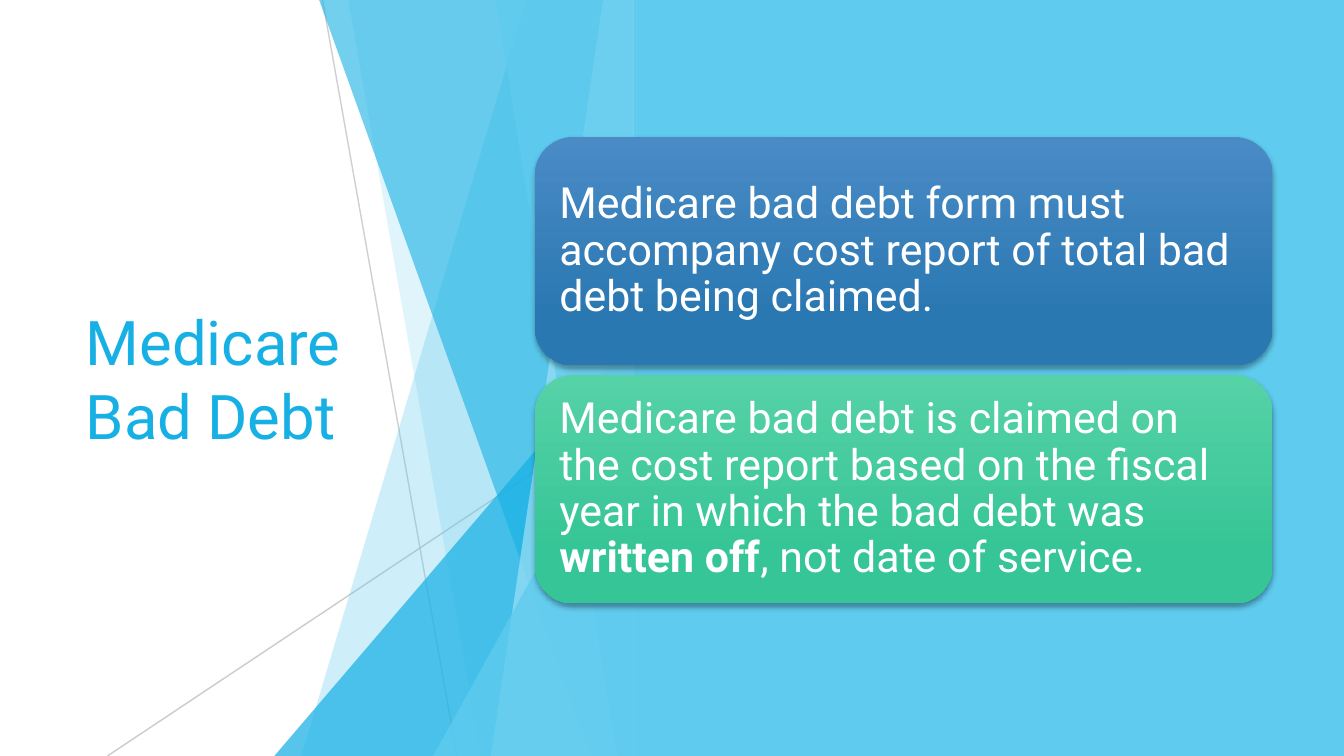
from pptx import Presentation
from pptx.dml.color import RGBColor
from pptx.enum.shapes import MSO_CONNECTOR, MSO_SHAPE
from pptx.enum.text import MSO_ANCHOR
from pptx.oxml import parse_xml
from pptx.oxml.ns import nsdecls, qn
from pptx.util import Pt

WHITE = RGBColor(0xFF, 0xFF, 0xFF)
SKY = RGBColor(0x5F, 0xCB, 0xEF)
AZURE = RGBColor(0x17, 0xB0, 0xE4)
PALE = RGBColor(0x9F, 0xE0, 0xF5)
GREY = RGBColor(0xBF, 0xBF, 0xBF)
BLUES = RGBColor(0x4A, 0x8B, 0xC6), RGBColor(0x2A, 0x78, 0xB2)
GREENS = RGBColor(0x56, 0xD2, 0xA7), RGBColor(0x36, 0xC5, 0x96)

WIDTH, HEIGHT = 720, 405
PANEL_LEFT = 339.3
FACET_TOP = -0.6


def set_opacity(shape, percent):
    for color in shape.element.spPr.iter(qn("a:srgbClr")):
        color.append(parse_xml(f'<a:alpha {nsdecls("a")} val="{percent * 1000}"/>'))


def add_text(left, top, width, height, runs, size, color, **spacing):
    """Add a vertically centred text box; runs are (text, bold) pairs."""
    box = slide.shapes.add_textbox(Pt(left), Pt(top), Pt(width), Pt(height))
    frame = box.text_frame
    frame.word_wrap = True
    frame.vertical_anchor = MSO_ANCHOR.MIDDLE
    for side in ("left", "right", "top", "bottom"):
        setattr(frame, f"margin_{side}", Pt(7.2))
    paragraph = frame.paragraphs[0]
    for name, value in spacing.items():
        setattr(paragraph, name, value)
    for text, bold in runs:
        run = paragraph.add_run()
        run.text = text
        run.font.color.rgb = color
        for name, value in {"name": "Roboto", "size": Pt(size), "bold": bold}.items():
            setattr(run.font, name, value)


presentation = Presentation()
presentation.slide_width, presentation.slide_height = Pt(WIDTH), Pt(HEIGHT)
slide = presentation.slides.add_slide(presentation.slide_layouts[6])
slide.background.fill.solid()
slide.background.fill.fore_color.rgb = WHITE

# Thin crossing lines
for start_x, start_y, end_x, end_y, opacity in (
    (172.8, 0, 244.8, HEIGHT, 75),
    (PANEL_LEFT, 217.5, 57.6, HEIGHT, 80),
):
    line = slide.shapes.add_connector(
        MSO_CONNECTOR.STRAIGHT, Pt(start_x), Pt(start_y), Pt(end_x), Pt(end_y))
    line.line.color.rgb = GREY
    line.line.width = Pt(0.75)
    set_opacity(line, opacity)
    line.element.spPr.append(parse_xml(f'<a:effectLst {nsdecls("a")}/>'))

# Translucent facets: top-left x, bottom-left x, colour, opacity;
# a triangle gives its top y in place of the top-left x
for kind, top_value, bottom_x, color, opacity in (
    ("band", 282.2, 161.5, SKY, 30),
    ("band", 186.5, 257.8, SKY, 20),
    ("triangle", 180, 147, AZURE, 72),
    ("band", 170.8, 316.6, AZURE, 60),
    ("band", 323.2, 263, PALE, 70),
    ("band", 265.5, 330.6, SKY, 65),
    ("triangle", 211.5, 232, SKY, 80),
):
    if kind == "triangle":
        facet = slide.shapes.add_shape(
            MSO_SHAPE.ISOSCELES_TRIANGLE, Pt(bottom_x), Pt(top_value),
            Pt(PANEL_LEFT - bottom_x), Pt(HEIGHT - top_value))
        facet.adjustments[0] = 1
    else:
        builder = slide.shapes.build_freeform(Pt(top_value), Pt(FACET_TOP))
        corners = (PANEL_LEFT, FACET_TOP), (PANEL_LEFT, HEIGHT), (bottom_x, HEIGHT)
        builder.add_line_segments([(Pt(x), Pt(y)) for x, y in corners])
        facet = builder.convert_to_shape()
    facet.shadow.inherit = False
    facet.fill.solid()
    facet.fill.fore_color.rgb = color
    facet.line.fill.background()
    set_opacity(facet, opacity)

add_text(38.9, 81.4, 209.5, 242, [("Medicare Bad Debt", False)], 33, AZURE)

panel = slide.shapes.add_shape(
    MSO_SHAPE.RECTANGLE, Pt(PANEL_LEFT), 0, Pt(WIDTH - PANEL_LEFT), Pt(HEIGHT))
panel.shadow.inherit = False
panel.fill.solid()
panel.fill.fore_color.rgb = SKY
panel.line.fill.background()

# Message cards
CARD_LEFT, CARD_TOP, CARD_WIDTH, CARD_HEIGHT = 286.6, 73.4, 395.2, 122.4
CARD_STEP, CARD_INSET = 127.5, 6
SHADOW = (
    f'<a:effectLst {nsdecls("a")}><a:outerShdw blurRad="{Pt(3)}" dist="{Pt(2)}" '
    'dir="5400000" rotWithShape="0"><a:srgbClr val="000000"><a:alpha val="35000"/>'
    "</a:srgbClr></a:outerShdw></a:effectLst>")
cards = (
    (BLUES, [("Medicare bad debt form must accompany cost report of total bad "
              "debt being claimed.", False)]),
    (GREENS, [("Medicare bad debt is claimed on the cost report based on the fiscal "
               "year in which the bad debt was ", False),
              ("written off", True),
              (", not date of service.", False)]),
)
for index, (colors, runs) in enumerate(cards):
    top = CARD_TOP + index * CARD_STEP
    card = slide.shapes.add_shape(
        MSO_SHAPE.ROUNDED_RECTANGLE, Pt(CARD_LEFT), Pt(top), Pt(CARD_WIDTH), Pt(CARD_HEIGHT))
    card.fill.gradient()
    card.fill.gradient_angle = 270
    for stop, color, position in zip(card.fill.gradient_stops, colors, (0, 0.78)):
        stop.color.rgb = color
        stop.position = position
    card.line.fill.background()
    card.element.spPr.append(parse_xml(SHADOW))
    add_text(
        CARD_LEFT + CARD_INSET, top + CARD_INSET, CARD_WIDTH - 2 * CARD_INSET,
        CARD_HEIGHT - 2 * CARD_INSET, runs, 23, WHITE, line_spacing=0.9)

presentation.save("out.pptx")
